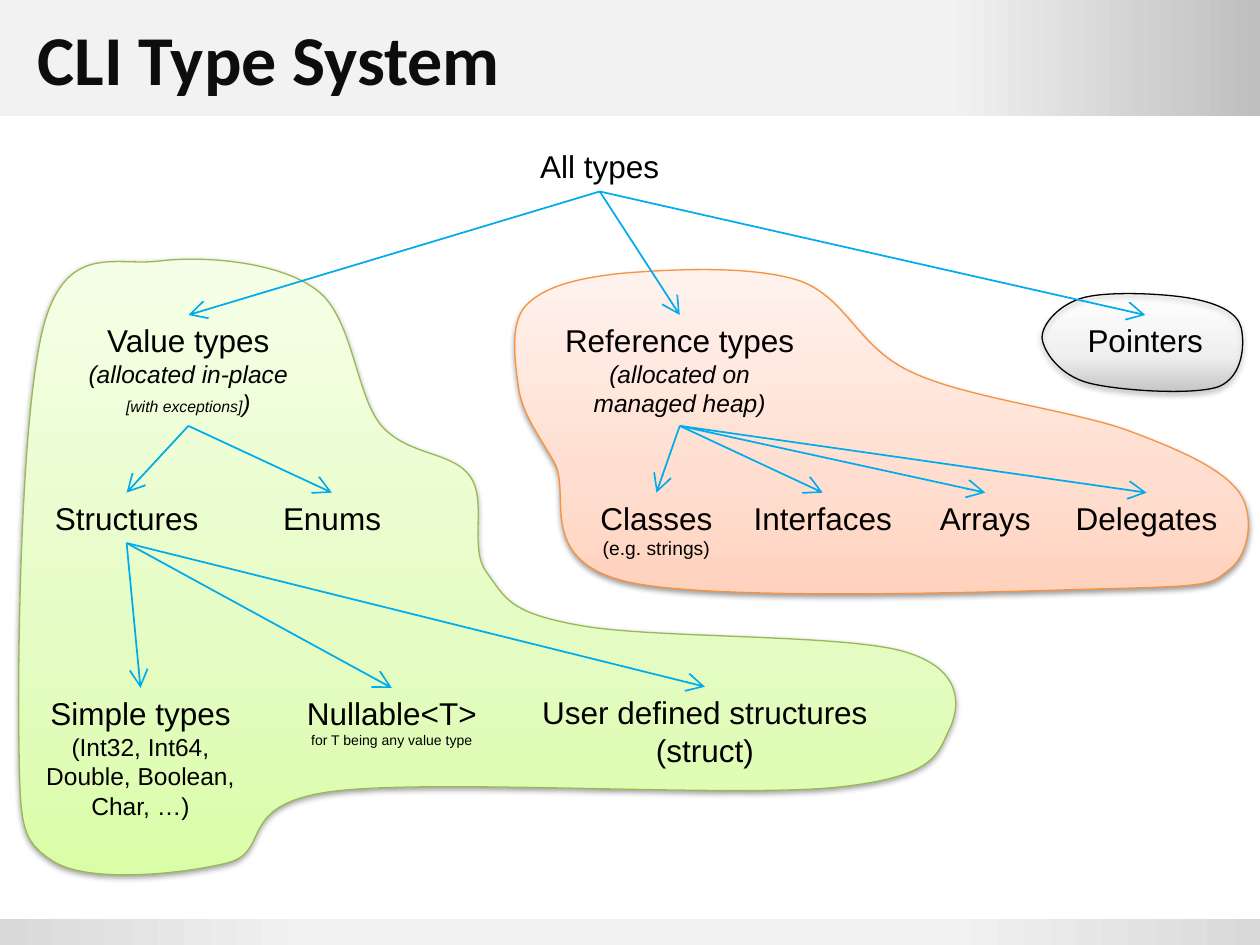
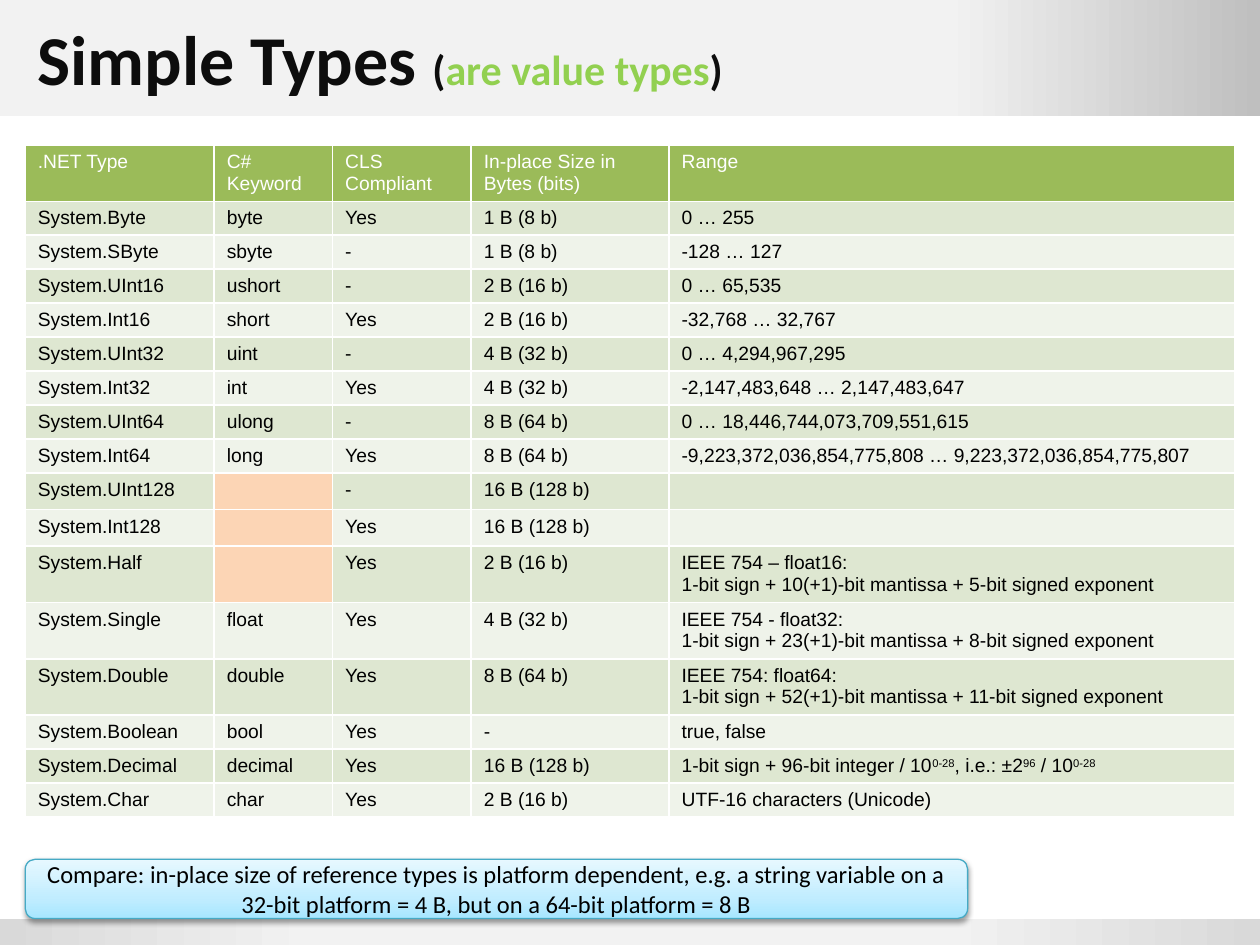
"""Build two slides on the CLI type system: a type tree and a table of simple types."""
from lxml.etree import SubElement
from pptx import Presentation
from pptx.dml.color import RGBColor as RGB
from pptx.enum.shapes import MSO_CONNECTOR as CONN, MSO_SHAPE as SHAPE
from pptx.enum.text import MSO_ANCHOR as ANCHOR, MSO_AUTO_SIZE as FIT, PP_ALIGN as ALIGN
from pptx.oxml.ns import qn
from pptx.util import Pt

PX = 9144
COLORS = {
    "title": "0D0D0D", "accent": "92D050", "text": "000000", "white": "FFFFFF",
    "arrow": "00ACEB", "header": "9BBB59", "odd": "DEE7D1", "even": "EFF3EA",
    "missing": "FCD5B5", "value": "98B955", "reference": "F69240",
    "pointer": "000000", "note": "46AAC5",
}
GRADIENTS = {
    "top": [(75, "F2F2F2"), (100, "BFBFBF")],
    "bottom": [(0, "D9D9D9"), (25, "F2F2F2"), (75, "F2F2F2"), (100, "D9D9D9")],
    "value": [(0, "DAFDA7"), (35, "E4FCC2"), (100, "F5FFE7")],
    "reference": [(0, "FFD2BD"), (35, "FFDED0"), (100, "FFF2ED")],
    "pointer": [(0, "BDBDBD", 50), (35, "D1D1D1", 13), (100, "EEEEEE", 0)],
    "note": [(0, "A7E6FF"), (35, "C1EDFF"), (100, "E7F8FF")],
}
TITLE = {"size": 40, "name": "Calibri", "bold": True, "color": "title"}
NODE = {"size": 18, "name": "Arial", "color": "text"}
CELL = {"size": 11, "name": "Arial", "color": "text", "bold": False}
HEAD = {**CELL, "color": "white"}
NOTE = {"size": 14, "name": "Calibri", "color": "text"}
SUP = {"baseline": 30000}
DETAIL = {"size": 14}
ASIDE = {"size": 14, "italic": True}

REGIONS = {
    "pointer": ((827, 233, 159, 77), [
        (861, 236), (881, 231, 925, 233, 946, 237), (967, 241, 982, 248, 985, 260),
        (988, 272, 987, 299, 967, 307), (946, 314, 887, 310, 864, 304),
        (841, 298, 828, 279, 827, 268), (827, 257, 841, 241, 861, 236)]),
    "value": ((15, 206, 744, 488), [
        (128, 207), (164, 203, 222, 208, 251, 230), (280, 251, 282, 312, 302, 337),
        (323, 362, 359, 358, 373, 378), (387, 397, 372, 435, 386, 454),
        (401, 474, 403, 486, 458, 496), (513, 507, 668, 503, 717, 517),
        (766, 531, 762, 562, 753, 580), (744, 598, 743, 617, 662, 625),
        (580, 633, 346, 618, 265, 628), (185, 638, 217, 676, 180, 685),
        (143, 694, 71, 701, 43, 684), (16, 667, 16, 656, 15, 584),
        (14, 512, 17, 317, 36, 254), (55, 192, 93, 212, 128, 207)]),
    "reference": ((408, 214, 583, 257), [
        (493, 217), (529, 214, 596, 210, 635, 223), (673, 237, 681, 277, 725, 296),
        (768, 316, 853, 326, 896, 342), (939, 358, 969, 372, 983, 390),
        (996, 408, 992, 438, 977, 451), (961, 463, 967, 465, 888, 467),
        (808, 469, 573, 478, 499, 462), (424, 445, 454, 392, 440, 367),
        (425, 341, 416, 330, 412, 310), (409, 289, 404, 258, 417, 243),
        (431, 228, 456, 221, 493, 217)]),
}
NODES = {
    "all": ((413, 112, 126, 40), ["All types"]),
    "reference": ((433, 250, 213, 88),
                  ["Reference types", [("(allocated on managed heap)", ASIDE)]]),
    "pointers": ((846, 250, 126, 40), ["Pointers"]),
    "value": ((43, 250, 213, 88),
              ["Value types", [("(allocated in-place\n", ASIDE),
                               ("[with exceptions]", {**ASIDE, "size": 9}), (")", ASIDE)]]),
    "classes": ((466, 391, 110, 59), [[("Classes\n", {}), ("(e.g. strings)", {"size": 11})]]),
    "interfaces": ((584, 391, 138, 40), ["Interfaces"]),
    "arrays": ((719, 391, 126, 40), ["Arrays"]),
    "delegates": ((839, 391, 142, 40), ["Delegates"]),
    "structures": ((33, 391, 135, 40), ["Structures"]),
    "enums": ((168, 391, 191, 40), ["Enums"]),
    "simple": ((26, 546, 171, 111),
               ["Simple types", [("(Int32, Int64, Double, Boolean, Char, …)", DETAIL)]]),
    "nullable": ((232, 546, 158, 54),
                 [[("Nullable<T>\n", {}), ("for T being any value type", {"size": 8})]]),
    "user": ((413, 545, 293, 71), ["User defined structures\n(struct)"]),
}
TREE = {
    "all": ["reference", "value", "pointers"],
    "reference": ["classes", "interfaces", "arrays", "delegates"],
    "value": ["structures", "enums"],
    "structures": ["simple", "nullable", "user"],
}
COLUMNS = [150, 94, 110, 157, 449]
HEADINGS = [".NET Type", "C# Keyword", "CLS Compliant", "In-place Size in Bytes (bits)", "Range"]
TYPES = [
    ("Byte", "byte", "Yes", "1 B (8 b)", "0 … 255"),
    ("SByte", "sbyte", "-", "1 B (8 b)", "-128 … 127"),
    ("UInt16", "ushort", "-", "2 B (16 b)", "0 … 65,535"),
    ("Int16", "short", "Yes", "2 B (16 b)", "-32,768 … 32,767"),
    ("UInt32", "uint", "-", "4 B (32 b)", "0 … 4,294,967,295"),
    ("Int32", "int", "Yes", "4 B (32 b)", "-2,147,483,648 … 2,147,483,647"),
    ("UInt64", "ulong", "-", "8 B (64 b)", "0 … 18,446,744,073,709,551,615"),
    ("Int64", "long", "Yes", "8 B (64 b)",
     "-9,223,372,036,854,775,808 … 9,223,372,036,854,775,807"),
    ("UInt128", "", "-", "16 B (128 b)", ""),
    ("Int128", "", "Yes", "16 B (128 b)", ""),
    ("Half", "", "Yes", "2 B (16 b)",
     "IEEE 754 – float16:\n1-bit sign + 10(+1)-bit mantissa + 5-bit signed exponent"),
    ("Single", "float", "Yes", "4 B (32 b)",
     "IEEE 754 - float32:\n1-bit sign + 23(+1)-bit mantissa + 8-bit signed exponent"),
    ("Double", "double", "Yes", "8 B (64 b)",
     "IEEE 754: float64:\n1-bit sign + 52(+1)-bit mantissa + 11-bit signed exponent"),
    ("Boolean", "bool", "Yes", "-", "true, false"),
    ("Decimal", "decimal", "Yes", "16 B (128 b)",
     [("1-bit sign + 96-bit integer / 10", {}), ("0-28", SUP), (", i.e.: ±2", {}),
      ("96", SUP), (" / 10", {}), ("0-28", SUP)]),
    ("Char", "char", "Yes", "2 B (16 b)", "UTF-16 characters (Unicode)"),
]


def px(*values):
    """Turn px lengths into EMU."""
    return [v * PX for v in values]


def rgb(name):
    """Look up a named colour."""
    return RGB.from_string(COLORS[name])


def format_run(r, fmt):
    """Apply a dict of format values to a run."""
    for key, value in fmt.items():
        if key == "color":
            r.font.color.rgb = rgb(value)
        elif key == "baseline":
            r.font._element.set("baseline", str(value))
        else:
            setattr(r.font, key, Pt(value) if key == "size" else value)


def write(tf, paragraphs, base, align=ALIGN.LEFT):
    """Fill a text frame with paragraphs, each a string or a list of (text, format) runs."""
    for i, runs in enumerate(paragraphs):
        p = tf.add_paragraph() if i else tf.paragraphs[0]
        p.alignment = align
        for text, fmt in [(runs, {})] if isinstance(runs, str) else runs:
            for n, line in enumerate(text.split("\n")):
                if n:
                    p.add_line_break()
                if line:
                    r = p.add_run()
                    r.text = line
                    format_run(r, {**base, **fmt})
        if not p.runs:
            p._p.get_or_add_endParaRPr().set("sz", str(base["size"] * 100))


def set_frame(tf, **values):
    """Set text frame or cell attributes."""
    for key, value in values.items():
        setattr(tf, key, value)


def add_text(slide, box, paragraphs, base, align=ALIGN.LEFT, **frame):
    """Add a wrapping text box."""
    sp = slide.shapes.add_textbox(*px(*box))
    set_frame(sp.text_frame, word_wrap=True, **frame)
    write(sp.text_frame, paragraphs, base, align)
    return sp


def paint(sp, look, angle=90, outlined=True):
    """Give a shape its gradient and, when outlined, its line and soft shadow."""
    sp.fill.gradient()
    sp.fill.gradient_angle = angle
    stops = sp._element.spPr.find(".//" + qn("a:gsLst"))
    stops.clear()
    for pos, color, *alpha in GRADIENTS[look]:
        gs = SubElement(stops, qn("a:gs"), pos=str(pos * 1000))
        clr = SubElement(gs, qn("a:srgbClr"), val=color)
        for value in alpha:
            SubElement(clr, qn("a:alpha"), val=str(value * 1000))
    sp.shadow.inherit = False
    if not outlined:
        sp.line.fill.background()
        return
    sp.line.color.rgb, sp.line.width = rgb(look), Pt(0.75)
    effects = sp._element.spPr.find(qn("a:effectLst"))
    shadow = SubElement(effects, qn("a:outerShdw"), blurRad="40000", dist="20000",
                        dir="5400000", rotWithShape="0")
    clr = SubElement(shadow, qn("a:srgbClr"), val=COLORS["text"])
    SubElement(clr, qn("a:alpha"), val="38000")


def add_region(slide, look):
    """Add a closed outline of cubic curves inside its box."""
    box, (start, *curves) = REGIONS[look]
    builder = slide.shapes.build_freeform(*start, scale=PX)
    builder.add_line_segments([curve[-2:] for curve in curves], close=True)
    sp = builder.convert_to_shape()
    sp.left, sp.top, sp.width, sp.height = px(*box)
    outline = sp._element.spPr.find(".//" + qn("a:path"))
    outline.set("w", str(box[2]))
    outline.set("h", str(box[3]))
    move, *lines, close = list(outline)
    for line in lines:
        outline.remove(line)
    move[0].set("x", str(start[0] - box[0]))
    move[0].set("y", str(start[1] - box[1]))
    for curve in curves:
        bezier = SubElement(outline, qn("a:cubicBezTo"))
        for x, y in zip(curve[::2], curve[1::2]):
            SubElement(bezier, qn("a:pt"), x=str(x - box[0]), y=str(y - box[1]))
    outline.append(close)
    paint(sp, look)


def add_arrow(slide, parent, child):
    """Connect the bottom of a parent box to the top of a child box."""
    c = slide.shapes.add_connector(CONN.STRAIGHT, 0, 0, 0, 0)
    c.begin_connect(parent, 2)
    c.end_connect(child, 0)
    c.line.color.rgb, c.line.width = rgb("arrow"), Pt(1)
    SubElement(c.line._get_or_add_ln(), qn("a:tailEnd"), type="arrow", w="lg", len="lg")
    SubElement(c._element.spPr, qn("a:effectLst"))


def style_cell(cell, fill):
    """Give a cell thin white borders, a fill and tight margins."""
    tc_pr = cell._tc.get_or_add_tcPr()
    for side in "LRTB":
        ln = SubElement(tc_pr, qn("a:ln" + side), w=str(Pt(1)))
        SubElement(SubElement(ln, qn("a:solidFill")), qn("a:srgbClr"), val=COLORS["white"])
    cell.fill.solid()
    cell.fill.fore_color.rgb = rgb(fill)
    top, bottom = px(5, 3)
    set_frame(cell, margin_top=top, margin_bottom=bottom)


def row_height(row):
    """Choose a row height from its lines and blanks."""
    if "\n" in row[-1]:
        return 44
    return 27 if row[-1] else 29


def add_type_table(slide):
    """Add the table of simple types."""
    rows = [HEADINGS] + [("System." + name, *rest) for name, *rest in TYPES]
    heights = [44] + [row_height(row) for row in TYPES]
    table = slide.shapes.add_table(len(rows), len(COLUMNS),
                                   *px(20, 115, sum(COLUMNS), sum(heights))).table
    for column, width in zip(table.columns, px(*COLUMNS)):
        column.width = width
    for i, (row, height) in enumerate(zip(rows, px(*heights))):
        table.rows[i].height = height
        band = ("odd" if i % 2 else "even") if i else "header"
        for j, content in enumerate(row):
            cell = table.cell(i, j)
            style_cell(cell, "missing" if j == 1 and not content else band)
            write(cell.text_frame, [content], CELL if i else HEAD)


def add_note(slide, box, text):
    """Add a rounded note with centred text."""
    sp = slide.shapes.add_shape(SHAPE.ROUNDED_RECTANGLE, *px(*box))
    paint(sp, "note")
    set_frame(sp.text_frame, word_wrap=True, vertical_anchor=ANCHOR.MIDDLE,
              margin_top=0, margin_bottom=0)
    write(sp.text_frame, [text], NOTE, ALIGN.CENTER)


def add_slide(prs, title):
    """Add a blank slide with the two bands and a title."""
    slide = prs.slides.add_slide(prs.slide_layouts[6])
    for look, box in {"top": (0, 0, 1000, 92), "bottom": (0, 729, 1000, 21)}.items():
        sp = slide.shapes.add_shape(SHAPE.RECTANGLE, *px(*box))
        paint(sp, look, angle=0, outlined=False)
    add_text(slide, (20, 0, 961, 92), [title], TITLE, vertical_anchor=ANCHOR.MIDDLE)
    return slide


def main():
    """Build and save the deck."""
    prs = Presentation()
    prs.slide_width, prs.slide_height = px(1000, 750)

    s = add_slide(prs, "CLI Type System")
    for look in REGIONS:
        add_region(s, look)
    boxes = {key: add_text(s, box, paragraphs, NODE, ALIGN.CENTER,
                           auto_size=FIT.SHAPE_TO_FIT_TEXT)
             for key, (box, paragraphs) in NODES.items()}
    for parent, children in TREE.items():
        for child in children:
            add_arrow(s, boxes[parent], boxes[child])

    small = {"size": 24}
    s = add_slide(prs, [("Simple Types ", {}), ("(", small),
                        ("are value types", {**small, "color": "accent"}), (")", small)])
    add_type_table(s)
    add_note(s, (20, 682, 748, 47),
             "Compare: in-place size of reference types is platform dependent, e.g. a string "
             "variable on a 32-bit platform = 4 B, but on a 64-bit platform = 8 B")
    prs.save("out.pptx")


if __name__ == "__main__":
    main()
